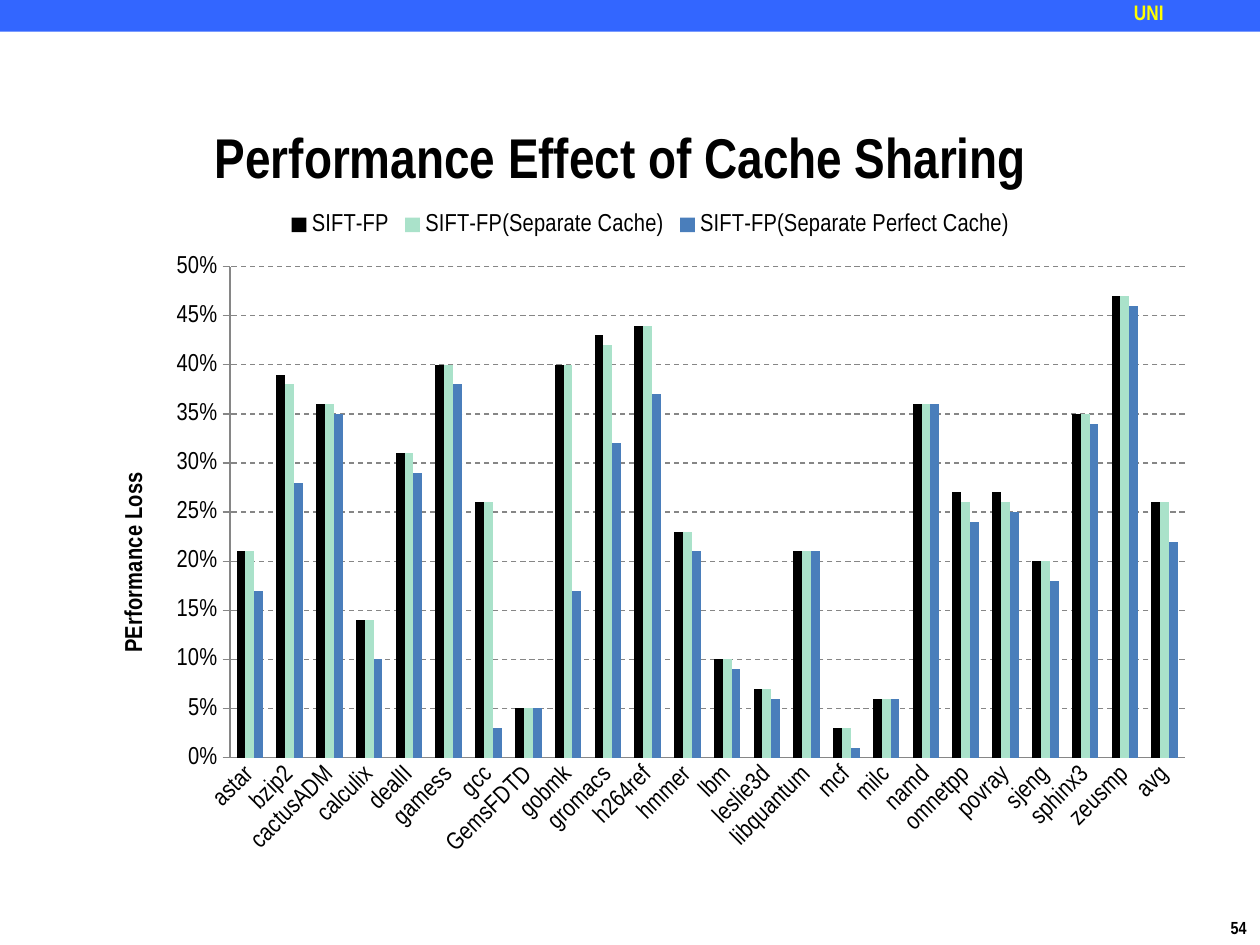
import pptx
import pptx.chart.data
import pptx.dml.color
import pptx.enum.chart
import pptx.enum.dml
import pptx.enum.shapes
import pptx.enum.text
import pptx.oxml
import pptx.oxml.ns
import pptx.util
from pptx.util import Cm, Pt

FONT = "Arial Narrow"
AXIS_GRAY = "868686"
CATEGORIES = [
    "astar", "bzip2", "cactusADM", "calculix", "dealII", "gamess", "gcc", "GemsFDTD",
    "gobmk", "gromacs", "h264ref", "hmmer", "lbm", "leslie3d", "libquantum", "mcf",
    "milc", "namd", "omnetpp", "povray", "sjeng", "sphinx3", "zeusmp", "avg",
]
SERIES = [
    ("SIFT-FP", "000000", [
        0.21, 0.39, 0.36, 0.14, 0.31, 0.4, 0.26, 0.05, 0.4, 0.43, 0.44, 0.23,
        0.1, 0.07, 0.21, 0.03, 0.06, 0.36, 0.27, 0.27, 0.2, 0.35, 0.47, 0.26]),
    ("SIFT-FP(Separate Cache)", "AAE2CA", [
        0.21, 0.38, 0.36, 0.14, 0.31, 0.4, 0.26, 0.05, 0.4, 0.42, 0.44, 0.23,
        0.1, 0.07, 0.21, 0.03, 0.06, 0.36, 0.26, 0.26, 0.2, 0.35, 0.47, 0.26]),
    ("SIFT-FP(Separate Perfect Cache)", "4A7EBB", [
        0.17, 0.28, 0.35, 0.1, 0.29, 0.38, 0.03, 0.05, 0.17, 0.32, 0.37, 0.21,
        0.09, 0.06, 0.21, 0.01, 0.06, 0.36, 0.24, 0.25, 0.18, 0.34, 0.46, 0.22]),
]


def rgb(value):
    return pptx.dml.color.RGBColor.from_string(value)


def style_font(font, size, color="000000", bold=False):
    font.name = FONT
    font.size = Pt(size)
    font.bold = bold
    font.color.rgb = rgb(color)


def add_bar(slide, box, color):
    sp = slide.shapes.add_shape(pptx.enum.shapes.MSO_SHAPE.RECTANGLE, *box)
    sp.shadow.inherit = False
    sp.fill.solid()
    sp.fill.fore_color.rgb = rgb(color)
    sp.line.fill.background()


def add_text(slide, box, text, size, color="000000", wrap=True, inset=True):
    tf = slide.shapes.add_textbox(*box).text_frame
    tf.word_wrap = wrap
    if not inset:
        tf.margin_left = tf.margin_top = tf.margin_right = tf.margin_bottom = 0
    p = tf.paragraphs[0]
    r = p.add_run()
    r.text = text
    style_font(r.font, size, color, bold=True)
    return p


def set_layout(element, **settings):
    qn = pptx.oxml.ns.qn
    layout = element.find(qn("c:layout"))
    if layout is None:
        layout = element.makeelement(qn("c:layout"), {})
        element.insert(0, layout)
    manual = layout.makeelement(qn("c:manualLayout"), {})
    layout.append(manual)
    for name, value in settings.items():
        manual.append(manual.makeelement(qn("c:" + name), {"val": str(value)}))


def style_line(line, dashed=False):
    line.color.rgb = rgb(AXIS_GRAY)
    line.width = Pt(0.75)
    if dashed:
        line.dash_style = pptx.enum.dml.MSO_LINE.DASH


def style_category_axis(axis):
    axis.major_tick_mark = pptx.enum.chart.XL_TICK_MARK.NONE
    style_font(axis.tick_labels.font, 14)
    style_line(axis.format.line)
    body = axis._element.find(".//" + pptx.oxml.ns.qn("a:bodyPr"))
    body.set("rot", "-2700000")
    body.set("vert", "horz")


def style_value_axis(axis):
    axis.minimum_scale, axis.maximum_scale, axis.major_unit = 0, 0.5, 0.05
    axis.major_tick_mark = pptx.enum.chart.XL_TICK_MARK.OUTSIDE
    axis.tick_labels.number_format = "0%"
    axis.tick_labels.number_format_is_linked = False
    style_font(axis.tick_labels.font, 14)
    style_line(axis.format.line)
    style_line(axis.major_gridlines.format.line, dashed=True)
    tf = axis.axis_title.text_frame
    r = tf.paragraphs[0].add_run()
    r.text = "PErformance Loss"
    style_font(r.font, 14, bold=True)
    body = tf._txBody.bodyPr
    body.set("rot", "-5400000")
    body.set("vert", "horz")
    set_layout(axis.axis_title._element, xMode="edge", yMode="edge", x=0.02, y=0.4)


def add_loss_chart(slide, box):
    data = pptx.chart.data.CategoryChartData(number_format="0%")
    data.categories = CATEGORIES
    for name, _, values in SERIES:
        data.add_series(name, values)
    kind = pptx.enum.chart.XL_CHART_TYPE.COLUMN_CLUSTERED
    chart = slide.shapes.add_chart(kind, *box, data).chart
    chart.has_title = False
    style_font(chart.font, 10)
    plot = chart.plots[0]
    plot.gap_width = 150
    plot.overlap = 0
    plot.vary_by_categories = False
    for series, (_, color, _) in zip(plot.series, SERIES):
        series.format.fill.solid()
        series.format.fill.fore_color.rgb = rgb(color)
    chart.has_legend = True
    chart.legend.position = pptx.enum.chart.XL_LEGEND_POSITION.TOP
    chart.legend.include_in_layout = False
    style_font(chart.legend.font, 14)
    style_category_axis(chart.category_axis)
    style_value_axis(chart.value_axis)
    set_layout(chart._chartSpace.chart.plotArea, layoutTarget="inner", xMode="edge",
               yMode="edge", x=0.122, y=0.101, w=0.858, h=0.731)


def main():
    prs = pptx.Presentation()
    prs.slide_width, prs.slide_height = Cm(25.4), Cm(19.05)
    slide = prs.slides.add_slide(prs.slide_layouts[6])
    add_text(slide, (Cm(24.56), Cm(18.36), Cm(0.86), Cm(0.69)), "54", 10, wrap=False)
    add_bar(slide, (0, 0, Cm(25.4), Cm(0.64)), "3366FF")
    add_text(slide, (Cm(22.86), 0, Cm(2.54), Cm(0.56)), "UNI", 12, "FFFF00", inset=False)
    add_loss_chart(slide, (Cm(1.9), Cm(4.01), Cm(22.43), Cm(13.54)))
    title = add_text(slide, (Cm(2.54), Cm(2.49), Cm(19.96), Cm(1.7)),
                     "Performance Effect of Cache Sharing", 32)
    title.alignment = pptx.enum.text.PP_ALIGN.CENTER
    title.line_spacing = 0.9
    prs.save("out.pptx")


if __name__ == "__main__":
    main()
